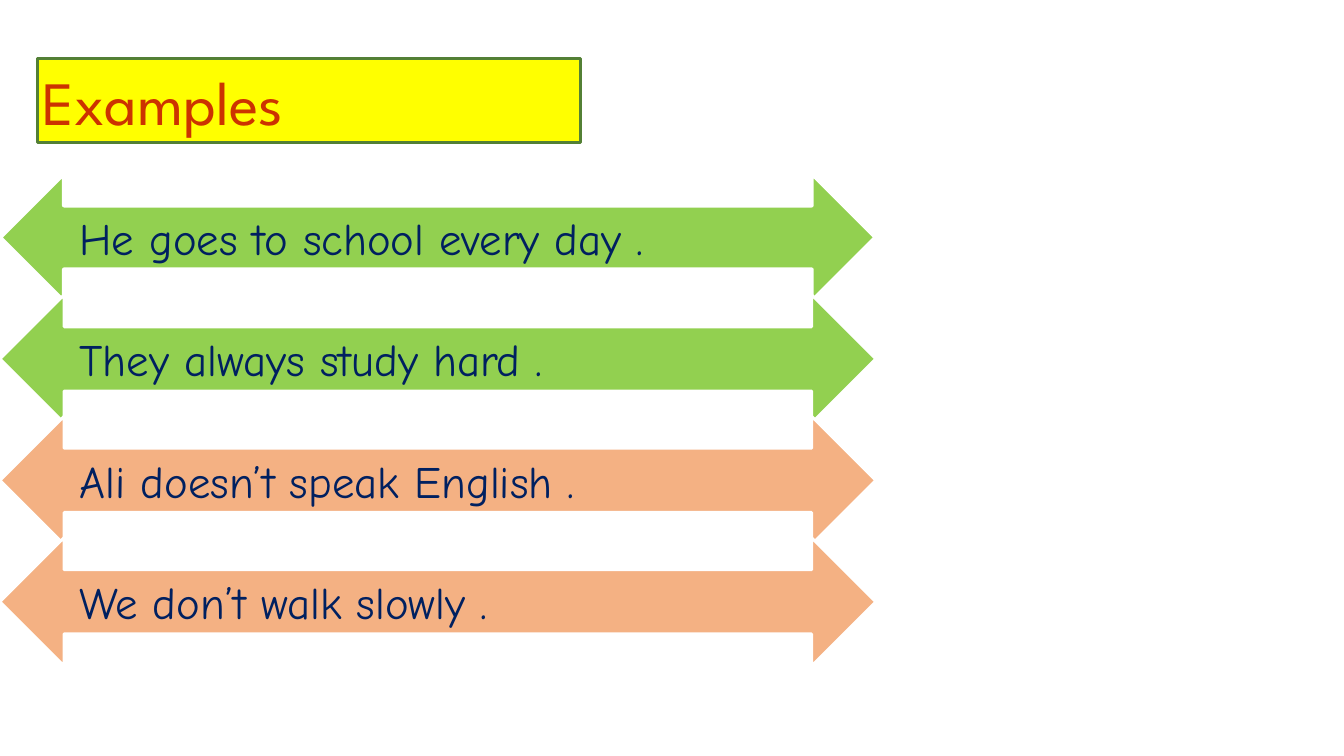
from dataclasses import dataclass

from pptx import Presentation
from pptx.dml.color import RGBColor
from pptx.enum.shapes import MSO_SHAPE as Preset
from pptx.enum.text import MSO_ANCHOR as Anchor, PP_ALIGN as Align
from pptx.util import Cm, Pt


@dataclass(frozen=True)
class Theme:
    """Colours, fonts and type sizes of the slide."""
    heading_fill: str = "FFFF00"
    heading_edge: str = "538035"
    heading_text: str = "CC3300"
    positive: str = "92D050"
    negative: str = "F4B183"
    arrow_edge: str = "FFFFFF"
    sentence_text: str = "002060"
    heading_font: str = "League Spartan"
    sentence_font: str = "Comic Neue"
    heading_size: int = 44
    sentence_size: int = 32


THEME = Theme()
INSET = 0.13
SENTENCE_INSET = 1.2
ARROW_TOP, ARROW_STEP = 4.37, 3.06
EXAMPLES = [
    ("He goes to school every day .", THEME.positive, 3),
    ("They always study hard .", THEME.positive, 2),
    ("Ali doesn’t speak English .", THEME.negative, 2),
    ("We don’t walk slowly .", THEME.negative, 2),
]


def add_label(slide, preset, box, fill, edge, edge_width, wording, font_format, left_inset):
    """Add a filled, outlined shape with left-aligned wording."""
    label = slide.shapes.add_shape(preset, *map(Cm, box))
    label.shadow.inherit = False
    label.fill.solid()
    label.fill.fore_color.rgb = RGBColor.from_string(fill)
    label.line.color.rgb = RGBColor.from_string(edge)
    label.line.width = Pt(edge_width)
    frame = label.text_frame
    frame_format = {
        "word_wrap": True,
        "vertical_anchor": Anchor.MIDDLE,
        "margin_left": Cm(left_inset),
        "margin_top": Cm(INSET),
        "margin_right": Cm(INSET),
        "margin_bottom": Cm(INSET),
    }
    for name, value in frame_format.items():
        setattr(frame, name, value)
    paragraph = frame.paragraphs[0]
    paragraph.alignment = Align.LEFT
    run = paragraph.add_run()
    run.text = wording
    family, size, colour = font_format
    for name, value in {"name": family, "size": Pt(size)}.items():
        setattr(run.font, name, value)
    run.font.color.rgb = RGBColor.from_string(colour)


def add_heading(slide, wording):
    """Add the framed heading."""
    add_label(slide, Preset.FLOWCHART_PROCESS, (0.94, 1.47, 13.69, 2.13),
              THEME.heading_fill, THEME.heading_edge, 2, wording,
              (THEME.heading_font, THEME.heading_size, THEME.heading_text), INSET)


def add_example(slide, row, sentence, fill, edge_width):
    """Add one example sentence on a double-headed arrow."""
    top = ARROW_TOP + row * ARROW_STEP
    add_label(slide, Preset.LEFT_RIGHT_ARROW, (0, top, 22.07, 3.23),
              fill, THEME.arrow_edge, edge_width, sentence,
              (THEME.sentence_font, THEME.sentence_size, THEME.sentence_text),
              SENTENCE_INSET)


def main():
    """Build and save the slide."""
    deck = Presentation()
    deck.slide_width, deck.slide_height = Cm(33.87), Cm(19.05)
    slide = deck.slides.add_slide(deck.slide_layouts[6])
    add_heading(slide, "Examples")
    for row, example in enumerate(EXAMPLES):
        add_example(slide, row, *example)
    deck.save("out.pptx")


if __name__ == "__main__":
    main()
